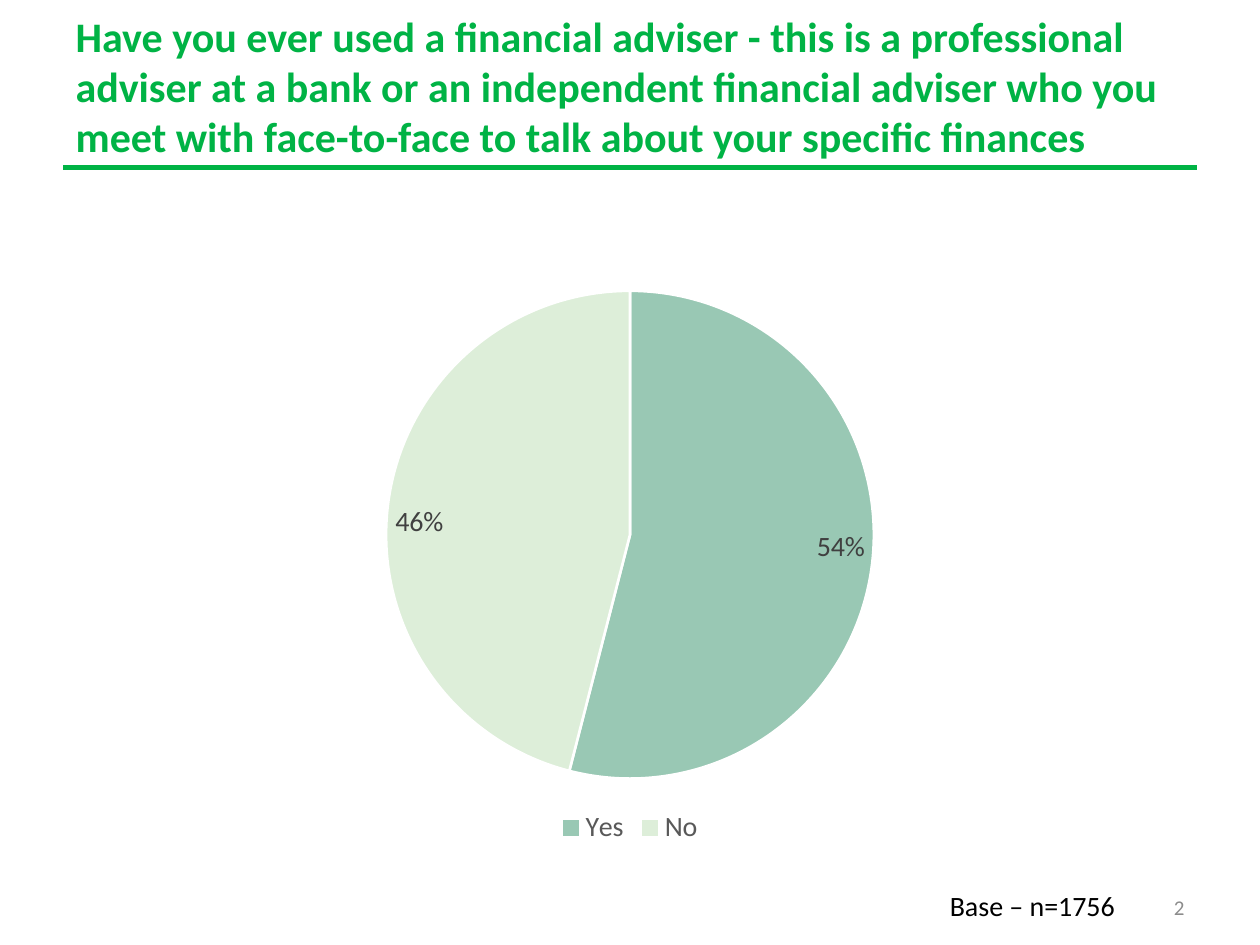
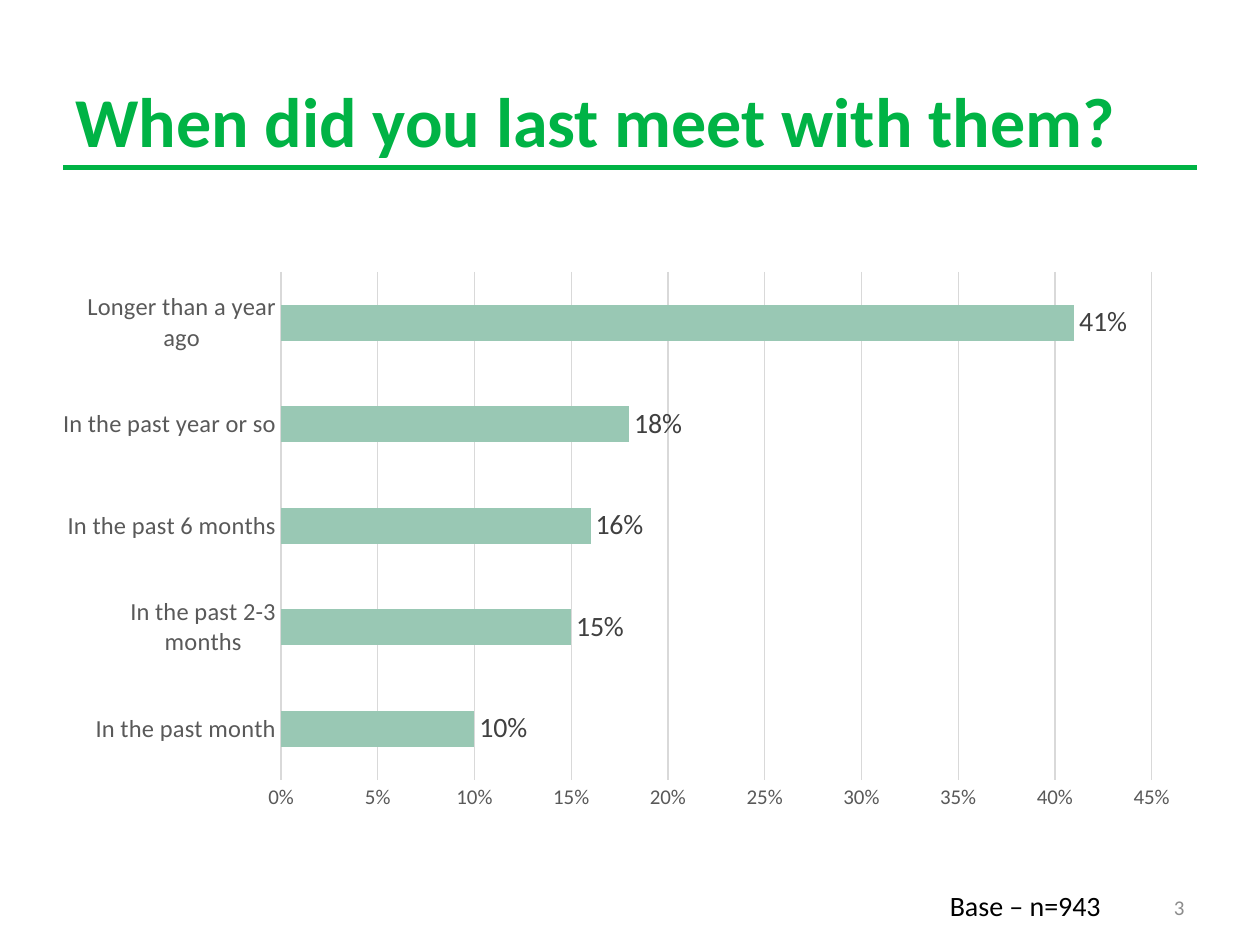
"""Build two survey slides on the use of financial advisers."""
from lxml.etree import SubElement
from pptx import Presentation
from pptx.chart.data import CategoryChartData
from pptx.dml.color import RGBColor
from pptx.enum.chart import XL_CHART_TYPE as ChartType
from pptx.enum.chart import XL_LABEL_POSITION as LabelPosition
from pptx.enum.chart import XL_LEGEND_POSITION as LegendPosition
from pptx.enum.chart import XL_TICK_MARK as TickMark
from pptx.enum.shapes import MSO_CONNECTOR as Connector
from pptx.enum.text import MSO_ANCHOR as Anchor
from pptx.enum.text import MSO_AUTO_SIZE as AutoSize
from pptx.enum.text import PP_ALIGN as Align
from pptx.oxml import parse_xml
from pptx.oxml.ns import nsdecls, qn
from pptx.util import Inches, Pt

COLORS = {
    "brand": "00B345",
    "sage": "99C8B4",
    "mint": "DDEED9",
    "label": "404040",
    "axis": "595959",
    "grid": "D9D9D9",
    "number": "8C8C8C",
    "black": "000000",
    "white": "FFFFFF",
}


class Deck:
    """Holds the shared style and the current slide."""

    font_name = "Calibri"
    left, width = Inches(0.5), Inches(9)

    def __init__(self):
        self.deck = Presentation()
        self.deck.slide_width, self.deck.slide_height = Inches(10), Inches(7.5)
        self.slide = None

    def color(self, name):
        return RGBColor.from_string(COLORS[name])

    def style(self, font, size, color, bold=False):
        font.name, font.size, font.bold = self.font_name, Pt(size), bold
        font.color.rgb = self.color(color)

    def stroke(self, line, color, width):
        line.color.rgb, line.width = self.color(color), Pt(width)

    def paint(self, fmt, color):
        fmt.fill.solid()
        fmt.fill.fore_color.rgb = self.color(color)

    def question(self, wording, size, number, base):
        self.slide = self.deck.slides.add_slide(self.deck.slide_layouts[5])
        self.rule(Inches(1.33))
        title = self.slide.shapes.title
        title.left, title.top = self.left, Inches(0.3)
        title.width, title.height = self.width, Inches(1.03)
        frame = title.text_frame
        frame.text, frame.word_wrap = wording, True
        frame.auto_size, frame.vertical_anchor = AutoSize.NONE, Anchor.BOTTOM
        frame.paragraphs[0].alignment = Align.LEFT
        self.style(frame.paragraphs[0].runs[0].font, size, "brand", True)
        page = self.text(str(number), 7.17, 2.33, 0.4, 12, "number")
        page.vertical_anchor, page.word_wrap = Anchor.MIDDLE, True
        page.paragraphs[0].alignment = Align.RIGHT
        sample = self.text(f"Base – n={base}", 7.44, 1.53, 0.37, 16, "black")
        sample.word_wrap = False

    def rule(self, top):
        line = self.slide.shapes.add_connector(
            Connector.STRAIGHT, self.left, top, self.left + self.width, top)
        self.stroke(line.line, "brand", 2.5)
        SubElement(line.element.spPr, qn("a:effectLst"))

    def text(self, wording, left, width, height, size, color):
        frame = self.slide.shapes.add_textbox(
            Inches(left), Inches(7), Inches(width), Inches(height)).text_frame
        frame.text = wording
        self.style(frame.paragraphs[0].runs[0].font, size, color)
        return frame

    def chart(self, kind, top, answers, position):
        data = CategoryChartData(number_format="0%")
        data.categories = list(answers)
        data.add_series("Series 1", list(answers.values()))
        chart = self.slide.shapes.add_chart(
            kind, self.left, Inches(top), self.width, Inches(4.58), data).chart
        chart.has_title = chart.has_legend = False
        self.style(chart.font, 10, "black")
        plot = chart.plots[0]
        plot.has_data_labels = True
        labels = plot.data_labels
        labels.show_value, labels.show_percentage = True, False
        labels.number_format, labels.number_format_is_linked = "0%", False
        labels.position = position
        self.style(labels.font, 16, "label")
        return chart

    def pie(self, top, answers, slice_colors):
        chart = self.chart(ChartType.PIE, top, answers, LabelPosition.INSIDE_END)
        for index, color in enumerate(slice_colors):
            slice_format = chart.plots[0].series[0].points[index].format
            self.paint(slice_format, color)
            self.stroke(slice_format.line, "white", 1.5)
        chart.has_legend = True
        chart.legend.position = LegendPosition.BOTTOM
        chart.legend.include_in_layout = False
        self.style(chart.legend.font, 16, "axis")

    def bars(self, top, answers, area):
        chart = self.chart(ChartType.BAR_CLUSTERED, top, answers, LabelPosition.OUTSIDE_END)
        plot = chart.plots[0]
        plot.gap_width, plot.vary_by_categories = 182, False
        self.paint(plot.series[0].format, "sage")
        periods, shares = chart.category_axis, chart.value_axis
        for axis, size in ((periods, 14), (shares, 12)):
            axis.major_tick_mark = axis.minor_tick_mark = TickMark.NONE
            self.style(axis.tick_labels.font, size, "axis")
        periods.has_major_gridlines = False
        self.stroke(periods.format.line, "grid", 0.75)
        shares.minimum_scale, shares.maximum_scale, shares.major_unit = 0, 0.45, 0.05
        shares.tick_labels.number_format = "0%"
        shares.tick_labels.number_format_is_linked = False
        shares.format.line.fill.background()
        self.stroke(shares.major_gridlines.format.line, "grid", 0.75)
        self.place_plot(chart, area)

    def place_plot(self, chart, area):
        plot_area = chart.element.find(".//" + qn("c:plotArea"))
        for layout in plot_area.findall(qn("c:layout")):
            plot_area.remove(layout)
        settings = [("layoutTarget", "inner"), ("xMode", "edge"), ("yMode", "edge")]
        settings += zip("xywh", area)
        inner = "".join(f'<c:{tag} val="{value}"/>' for tag, value in settings)
        plot_area.insert(0, parse_xml(
            f'<c:layout {nsdecls("c")}><c:manualLayout>{inner}</c:manualLayout></c:layout>'))


def main():
    survey = Deck()
    survey.question(
        "Have you ever used a financial adviser - this is a professional adviser "
        "at a bank or an independent financial adviser who you meet with "
        "face-to-face to talk about your specific finances", 24, 2, 1756)
    survey.pie(2.17, {"Yes": 0.54, "No": 0.46}, ("sage", "mint"))

    survey.question("When did you last meet with them?", 40, 3, 943)
    survey.bars(2.02, {
        "In the past month": 0.10,
        "In the past 2-3 months": 0.15,
        "In the past 6 months": 0.16,
        "In the past year or so": 0.18,
        "Longer than a year ago": 0.41,
    }, (0.19, 0.03, 0.77, 0.88))
    survey.deck.save("out.pptx")


if __name__ == "__main__":
    main()
